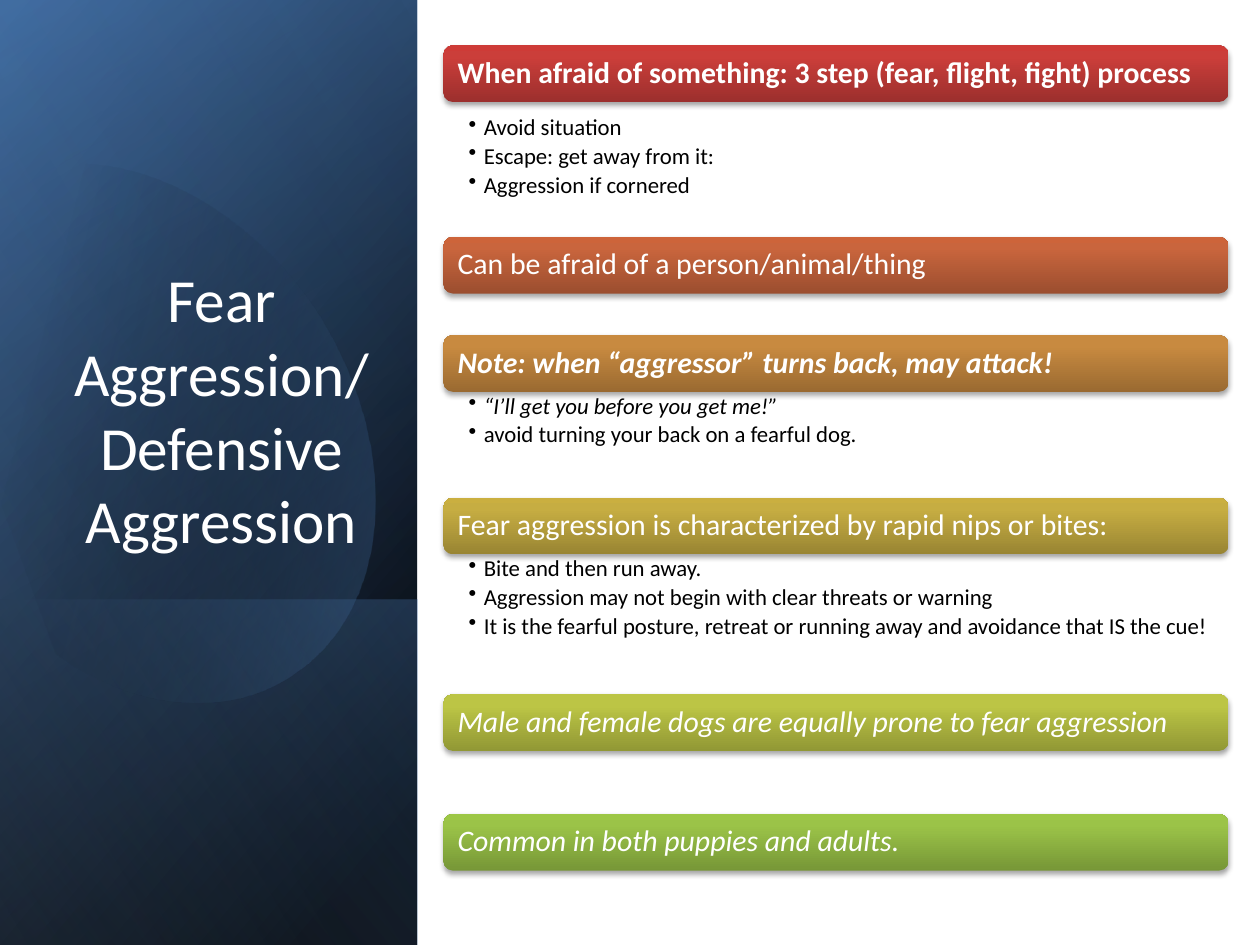
from dataclasses import dataclass

from lxml import etree
from pptx import Presentation
from pptx.dml.color import RGBColor
from pptx.enum.shapes import MSO_SHAPE
from pptx.enum.text import MSO_ANCHOR, PP_ALIGN
from pptx.oxml.ns import qn
from pptx.util import Inches, Pt

RECTANGLE, ROUNDED = MSO_SHAPE.RECTANGLE, MSO_SHAPE.ROUNDED_RECTANGLE
TOP, MIDDLE, BOTTOM = MSO_ANCHOR.TOP, MSO_ANCHOR.MIDDLE, MSO_ANCHOR.BOTTOM
LEFT, CENTER = PP_ALIGN.LEFT, PP_ALIGN.CENTER


@dataclass(frozen=True)
class Theme:
    """Colours, font and type sizes of the slide."""
    font: str = "Calibri"
    title_size: float = 35
    bar_size: float = 17
    bullet_size: float = 13
    white: str = "FFFFFF"
    black: str = "000000"
    navy: str = "376092"
    blue: str = "4F81BD"
    pale_blue: str = "95B3D7"


THEME = Theme()

PANEL_LAYERS = [
    ((0, 0, 3.31, 7.5), [(8, THEME.black, 100), (100, THEME.navy, 100)], 50),
    ((0, 0, 3.31, 7.5), [(0, THEME.black, 0), (99, THEME.blue, 46)], 30),
    ((0, 4.76, 3.31, 2.74), [(2, THEME.blue, 29), (100, THEME.black, 30)], 130),
]
PANEL_GLAZE = ((0, 0, 3.31, 7.5), [(0, THEME.black, 0), (99, THEME.pale_blue, 11)], 120)
OVAL_STOPS = [(29, THEME.black, 0), (100, THEME.blue, 43)]
OVAL_START = (0.96, 1.14)
OVAL_CURVES = [
    [(1.71, 1.22), (2.44, 1.92), (2.73, 2.9)],
    [(3.07, 4.12), (2.62, 5.31), (1.71, 5.57)],
    [(1.14, 5.74), (0.53, 5.5), (0.07, 5)],
    [(0.07, 5), (-0.03, 4.88), (-0.03, 4.88)],
    [(-0.03, 4.88), (-0.25, 1.66), (-0.25, 1.66)],
    [(-0.25, 1.66), (-0.15, 1.54), (-0.15, 1.54)],
    [(0.02, 1.37), (0.22, 1.25), (0.45, 1.18)],
    [(0.62, 1.13), (0.79, 1.12), (0.96, 1.14)],
]

SECTIONS = [
    (0.36, ("9C2F2D", "CB3E3A", "CE3B37"), 0.09,
     ("When afraid of something: 3 step (fear, flight, fight) process", True, False),
     [("Avoid situation", False), ("Escape: get away from it:", False),
      ("Aggression if cornered", False)]),
    (1.88, ("9B4E2F", "C9653D", "CD643A"), 0,
     ("Can be afraid of a person/animal/thing", False, False), []),
    (2.66, ("9A6A31", "C88A40", "CB8B3D"), 0,
     ("Note: when “aggressor” turns back, may attack!", True, True),
     [("“I’ll get you before you get me!”", True),
      ("avoid turning your back on a fearful dog.", False)]),
    (3.95, ("998533", "C6AD42", "CAAF40"), 0,
     ("Fear aggression is characterized by rapid nips or bites:", False, False),
     [("Bite and then run away.", False),
      ("Aggression may not begin with clear threats or warning", False),
      ("It is the fearful posture, retreat or running away and avoidance that IS the cue!",
       False)]),
    (5.51, ("919835", "BCC545", "BFC843"), 0,
     ("Male and female dogs are equally prone to fear aggression", False, True), []),
    (6.46, ("779737", "9BC348", "9DC746"), 0,
     ("Common in both puppies and adults.", False, True), []),
]


def add_node(parent, tag, **attributes):
    """Append a drawing element to parent."""
    return etree.SubElement(parent, qn(tag), {key: str(val) for key, val in attributes.items()})


def add_color(parent, color, opacity):
    """Append a colour with its opacity in percent."""
    add_node(add_node(parent, "a:srgbClr", val=color), "a:alpha", val=opacity * 1000)


def paint_gradient(shape, stops, angle):
    """Fill a shape with a linear gradient, without line or shadow."""
    shape.fill.gradient()
    gradient = shape.element.spPr.find(qn("a:gradFill"))
    gradient.clear()
    gradient.set("rotWithShape", "1")
    stop_list = add_node(gradient, "a:gsLst")
    for position, color, opacity in stops:
        add_color(add_node(stop_list, "a:gs", pos=position * 1000), color, opacity)
    add_node(gradient, "a:lin", ang=angle * 60000, scaled=0)
    shape.line.fill.background()
    shape.shadow.inherit = False


def add_shadow(shape):
    """Give a shape a soft shadow below."""
    effects = shape.element.spPr.find(qn("a:effectLst"))
    shadow = add_node(effects, "a:outerShdw", blurRad=Pt(3.1), dist=Pt(1.8),
                      dir=90 * 60000, rotWithShape=0)
    add_color(shadow, THEME.black, 35)


def set_frame(frame, anchor, insets):
    """Set wrapping, anchor and the left, top, right and bottom insets."""
    frame.word_wrap = True
    frame.vertical_anchor = anchor
    (frame.margin_left, frame.margin_top,
     frame.margin_right, frame.margin_bottom) = map(Inches, insets)


def write_para(para, text, size, color, align=LEFT, bold=False, italic=False):
    """Write one paragraph in a single style."""
    para.text = text
    para.alignment = align
    font = para.font
    font.name, font.size, font.bold, font.italic = THEME.font, Pt(size), bold, italic
    font.color.rgb = RGBColor.from_string(color)


def add_panel_layer(page, box, stops, angle):
    """Add a mirrored rectangle, turned a quarter, that covers the box."""
    left, top, width, height = box
    shift = (width - height) / 2
    layer = page.shapes.add_shape(RECTANGLE, Inches(left + shift), Inches(top - shift),
                                  Inches(height), Inches(width))
    layer.rotation = 90
    layer.element.spPr.xfrm.set("flipH", "1")
    paint_gradient(layer, stops, angle)


def curve_points(start, curves, steps=16):
    """Return points along a chain of cubic curves."""
    points = []
    for first, second, end in curves:
        for step in range(1, steps + 1):
            t = step / steps
            u = 1 - t
            points.append(tuple(
                Inches(u**3 * a + 3 * u * u * t * b + 3 * u * t * t * c + t**3 * d)
                for a, b, c, d in zip(start, first, second, end)))
        start = end
    return points


def add_oval(page):
    """Add the tilted translucent oval of the panel."""
    builder = page.shapes.build_freeform(*map(Inches, OVAL_START))
    builder.add_line_segments(curve_points(OVAL_START, OVAL_CURVES))
    oval = builder.convert_to_shape()
    oval.rotation = 343.9
    paint_gradient(oval, OVAL_STOPS, 30)


def add_title_panel(page, title_box):
    """Add the blue side panel and its title."""
    for layer in PANEL_LAYERS:
        add_panel_layer(page, *layer)
    add_oval(page)
    add_panel_layer(page, *PANEL_GLAZE)
    frame = page.shapes.add_textbox(*map(Inches, title_box)).text_frame
    set_frame(frame, BOTTOM, (0.1, 0.05, 0.1, 0.05))
    write_para(frame.paragraphs[0], "Fear Aggression/ Defensive Aggression",
               THEME.title_size, THEME.white, CENTER)


def add_bar(page, box, colors, heading):
    """Add one heading bar."""
    text, bold, italic = heading
    bar = page.shapes.add_shape(ROUNDED, *map(Inches, box))
    paint_gradient(bar, [(pos, color, 100) for pos, color in zip((0, 80, 100), colors)], 270)
    add_shadow(bar)
    set_frame(bar.text_frame, MIDDLE, (0.09, 0.09, 0.09, 0.09))
    para = bar.text_frame.paragraphs[0]
    write_para(para, text, THEME.bar_size, THEME.white, bold=bold, italic=italic)
    para.line_spacing = 0.9


def add_bullets(page, box, items):
    """Add the bullet list under a bar."""
    frame = page.shapes.add_textbox(*map(Inches, box)).text_frame
    set_frame(frame, TOP, (0.2, 0.02, 0.13, 0.02))
    for index, (text, italic) in enumerate(items):
        para = frame.add_paragraph() if index else frame.paragraphs[0]
        para.level = 1
        para.line_spacing = 0.9
        para.space_after = Pt(2.4)
        properties = para._p.get_or_add_pPr()
        properties.set("marL", str(Inches(0.12)))
        properties.set("indent", str(Inches(-0.12)))
        add_node(properties, "a:buChar", char="•")
        write_para(para, text, THEME.bullet_size, THEME.black, italic=italic)


def add_sections(page, left, width, bar_height=0.45):
    """Add every bar with its bullets in one column."""
    for top, colors, gap, heading, items in SECTIONS:
        add_bar(page, (left, top, width, bar_height), colors, heading)
        if items:
            box = (left, top + bar_height + gap, width, 0.24 * len(items) + 0.01)
            add_bullets(page, box, items)


def main():
    """Build and save the deck."""
    deck = Presentation()
    deck.slide_width, deck.slide_height = Inches(10), Inches(7.5)
    page = deck.slides.add_slide(deck.slide_layouts[6])
    add_title_panel(page, (0.48, 1.84, 2.56, 2.62))
    add_sections(page, 3.52, 6.23)
    deck.save("out.pptx")


if __name__ == "__main__":
    main()
